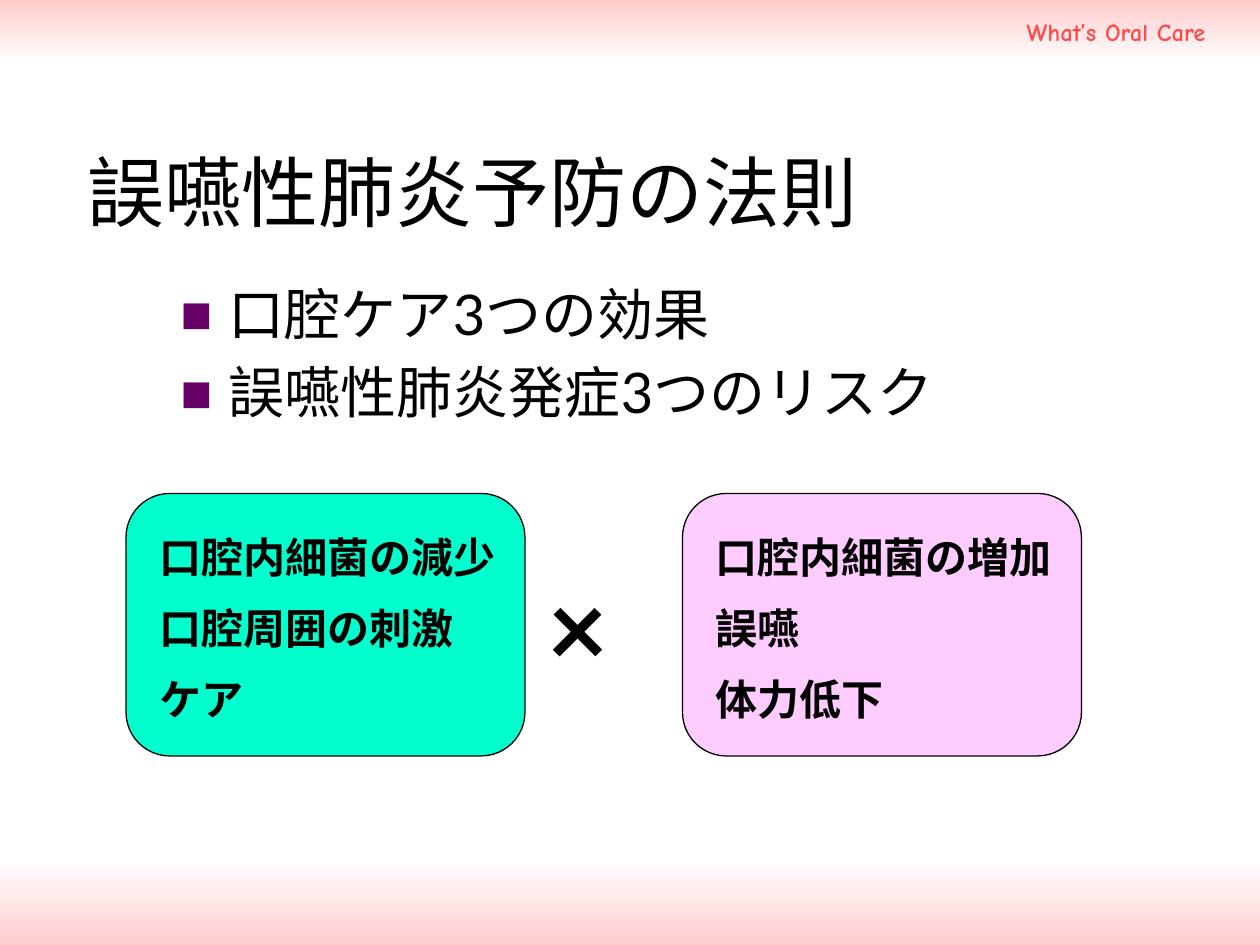
from lxml.etree import SubElement
from pptx import Presentation
from pptx.dml.color import RGBColor
from pptx.enum.shapes import MSO_SHAPE
from pptx.enum.text import MSO_ANCHOR, MSO_AUTO_SIZE, PP_ALIGN
from pptx.oxml.ns import qn
from pptx.util import Inches, Pt

COLS, ROWS = 120, 90
UNIT = Inches(10) / COLS


def grid(*cells):
    """Turn columns and rows of the grid into lengths."""
    return [round(cell * UNIT) for cell in cells]


def rgb(code):
    return RGBColor.from_string(code)


def move(shape, *cells):
    shape.left, shape.top, shape.width, shape.height = grid(*cells)


def write(frame, lines, size, font="Lato", color="000000", bold=False,
          gap=0, align=PP_ALIGN.LEFT):
    """Fill a frame, one paragraph a line; gap is the percent of space before."""
    frame.word_wrap = True
    for i, line in enumerate(lines):
        para = frame.add_paragraph() if i else frame.paragraphs[0]
        para.alignment = align
        para.space_before = Pt(0)
        space = para._p.pPr.find(qn("a:spcBef"))
        space.clear()
        SubElement(space, qn("a:spcPct"), val=str(gap * 1000))
        run = para.add_run()
        run.text = line
        run.font.size = Pt(size)
        run.font.bold = bold
        run.font.color.rgb = rgb(color)
        run.font.name = font
        SubElement(run.font._element, qn("a:ea"), typeface=font)


def bullet(para, color, size):
    props = para._p.get_or_add_pPr()
    props.set("marL", str(Inches(0.38)))
    props.set("indent", str(-Inches(0.38)))
    tint = SubElement(props, qn("a:buClr"))
    SubElement(tint, qn("a:srgbClr"), val=color)
    SubElement(props, qn("a:buSzPct"), val=str(size * 1000))
    SubElement(props, qn("a:buFont"), typeface="Lato")
    SubElement(props, qn("a:buChar"), char="■")


def band(shapes, top, height, colors):
    """Draw a full-width strip that fades from the first colour down."""
    strip = shapes.add_shape(MSO_SHAPE.RECTANGLE, *grid(0, top, COLS, height))
    strip.shadow.inherit = False
    strip.line.fill.background()
    strip.fill.gradient()
    strip.fill.gradient_angle = 270
    for stop, color in zip(strip.fill.gradient_stops, colors):
        stop.color.rgb = rgb(color)


def label(shapes, cells, lines, size, **style):
    box = shapes.add_textbox(*grid(*cells))
    write(box.text_frame, lines, size, gap=50, **style)
    box.text_frame.auto_size = MSO_AUTO_SIZE.SHAPE_TO_FIT_TEXT


def card(shapes, left, color, width, lines):
    """Group a rounded panel with its text."""
    group = shapes.add_group_shape().shapes
    panel = group.add_shape(MSO_SHAPE.ROUNDED_RECTANGLE,
                            *grid(left, 47, 38, 25))
    panel.shadow.inherit = False
    panel.fill.solid()
    panel.fill.fore_color.rgb = rgb(color)
    panel.line.color.rgb = rgb("000000")
    panel.line.width = Pt(0.75)
    label(group, (left + 2, 50, width, 20.4), lines, 24, bold=True)


def main():
    deck = Presentation()
    deck.slide_width, deck.slide_height = grid(COLS, ROWS)
    slide = deck.slides.add_slide(deck.slide_layouts[1])
    shapes = slide.shapes
    title, body = shapes.title, slide.placeholders[1]

    move(title, 7.1, 8.2, 92.9, 15)
    write(title.text_frame, ["誤嚥性肺炎予防の法則"], 44)
    title.text_frame.vertical_anchor = MSO_ANCHOR.BOTTOM
    title.text_frame.auto_size = MSO_AUTO_SIZE.NONE

    move(body, 16, 26, 102, 54)
    write(body.text_frame, ["口腔ケア3つの効果", "誤嚥性肺炎発症3つのリスク"],
          32, gap=20)
    body.text_frame.auto_size = MSO_AUTO_SIZE.NONE
    for para in body.text_frame.paragraphs:
        bullet(para, "660066", 60)

    band(shapes, 0, 6, ["FFCCCC", "FFFFFF"])
    band(shapes, 82, 8, ["FFFFFF", "FFCCCC"])
    label(shapes, (92, 1, 24, 4), ["What’s Oral Care"], 14,
          font="Comic Neue", color="FF4B4B", bold=True, align=PP_ALIGN.RIGHT)

    card(shapes, 12, "00FFCC", 37,
         ["口腔内細菌の減少", "口腔周囲の刺激", "ケア"])
    card(shapes, 65, "FFCCFF", 39,
         ["口腔内細菌の増加", "誤嚥", "体力低下"])
    label(shapes, (51, 53, 10, 13.2), ["×"], 60, bold=True)

    deck.save("out.pptx")


if __name__ == "__main__":
    main()
